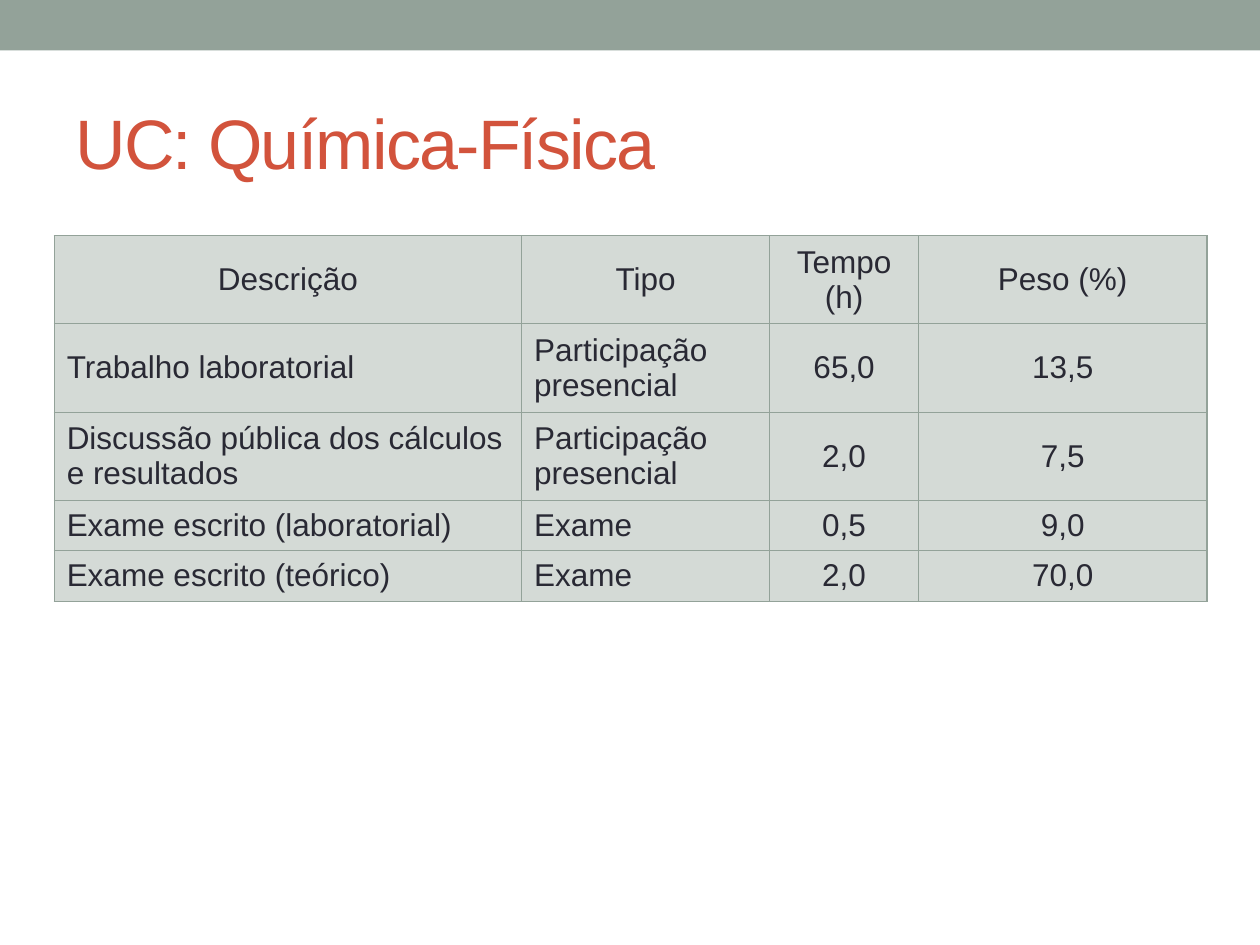
from lxml import etree
from pptx import Presentation
from pptx.dml.color import RGBColor
from pptx.enum import shapes, text
from pptx.oxml import ns
from pptx.util import Inches, Pt

SAGE = RGBColor(0x93, 0xA2, 0x99)
PALE_SAGE = RGBColor(0xD4, 0xDA, 0xD6)
RED = RGBColor(0xD2, 0x53, 0x3C)
INK = RGBColor(0x29, 0x29, 0x34)
FONT = "Arial"

TITLE = "UC: Química-Física"
HEADER = ("Descrição", "Tipo", "Tempo (h)", "Peso (%)")
ASSESSMENTS = [
    ("Trabalho laboratorial", "Participação presencial", "65,0", "13,5"),
    ("Discussão pública dos cálculos e resultados", "Participação presencial", "2,0", "7,5"),
    ("Exame escrito (laboratorial)", "Exame", "0,5", "9,0"),
    ("Exame escrito (teórico)", "Exame", "2,0", "70,0"),
]
COLUMN_WIDTHS = (3.71, 1.97, 1.18, 2.29)
ROW_HEIGHTS = (0.66, 0.66, 0.66, 0.38, 0.38)
FIRST_NUMBER_COLUMN = 2


def style(paragraph, size, color, align):
    paragraph.alignment = align
    font = paragraph.font
    font.name, font.size, font.bold = FONT, Pt(size), False
    font.color.rgb = color


def add_borders(cell):
    properties = cell._tc.get_or_add_tcPr()
    for side in ("lnL", "lnR", "lnT", "lnB"):
        line = etree.SubElement(properties, ns.qn(f"a:{side}"), w=str(Pt(0.75)))
        fill = etree.SubElement(line, ns.qn("a:solidFill"))
        etree.SubElement(fill, ns.qn("a:srgbClr"), val=str(SAGE))


def add_band(slide):
    band = slide.shapes.add_shape(
        shapes.MSO_SHAPE.RECTANGLE, 0, 0, Inches(10), Inches(0.4))
    band.shadow.inherit = False
    band.fill.solid()
    band.fill.fore_color.rgb = SAGE
    band.line.fill.background()


def add_title(slide):
    frame = slide.shapes.add_textbox(
        Inches(0.5), Inches(0.58), Inches(9), Inches(1.08)).text_frame
    frame.word_wrap = True
    frame.vertical_anchor = text.MSO_ANCHOR.MIDDLE
    heading = frame.paragraphs[0]
    run = heading.add_run()
    run.text = TITLE
    run.font._element.set("spc", "-100")
    style(heading, 40, RED, text.PP_ALIGN.LEFT)


def add_assessment_table(slide):
    rows = [HEADER, *ASSESSMENTS]
    table = slide.shapes.add_table(
        len(rows), len(HEADER), Inches(0.43), Inches(1.87),
        Inches(sum(COLUMN_WIDTHS)), Inches(sum(ROW_HEIGHTS))).table
    table.first_row = table.horz_banding = False
    for column, width in zip(table.columns, COLUMN_WIDTHS):
        column.width = Inches(width)
    for row, height in zip(table.rows, ROW_HEIGHTS):
        row.height = Inches(height)

    for r, row in enumerate(rows):
        for c, entry in enumerate(row):
            cell = table.cell(r, c)
            cell.text = entry
            cell.vertical_anchor = text.MSO_ANCHOR.MIDDLE
            if r == 0:
                cell.margin_left = cell.margin_right = Inches(0.04)
            add_borders(cell)
            cell.fill.solid()
            cell.fill.fore_color.rgb = PALE_SAGE
            centred = r == 0 or c >= FIRST_NUMBER_COLUMN
            style(cell.text_frame.paragraphs[0], 18, INK,
                  text.PP_ALIGN.CENTER if centred else text.PP_ALIGN.LEFT)


def main():
    deck = Presentation()
    deck.slide_width, deck.slide_height = Inches(10), Inches(7.5)
    slide = deck.slides.add_slide(deck.slide_layouts[6])
    add_band(slide)
    add_title(slide)
    add_assessment_table(slide)
    deck.save("out.pptx")


if __name__ == "__main__":
    main()
